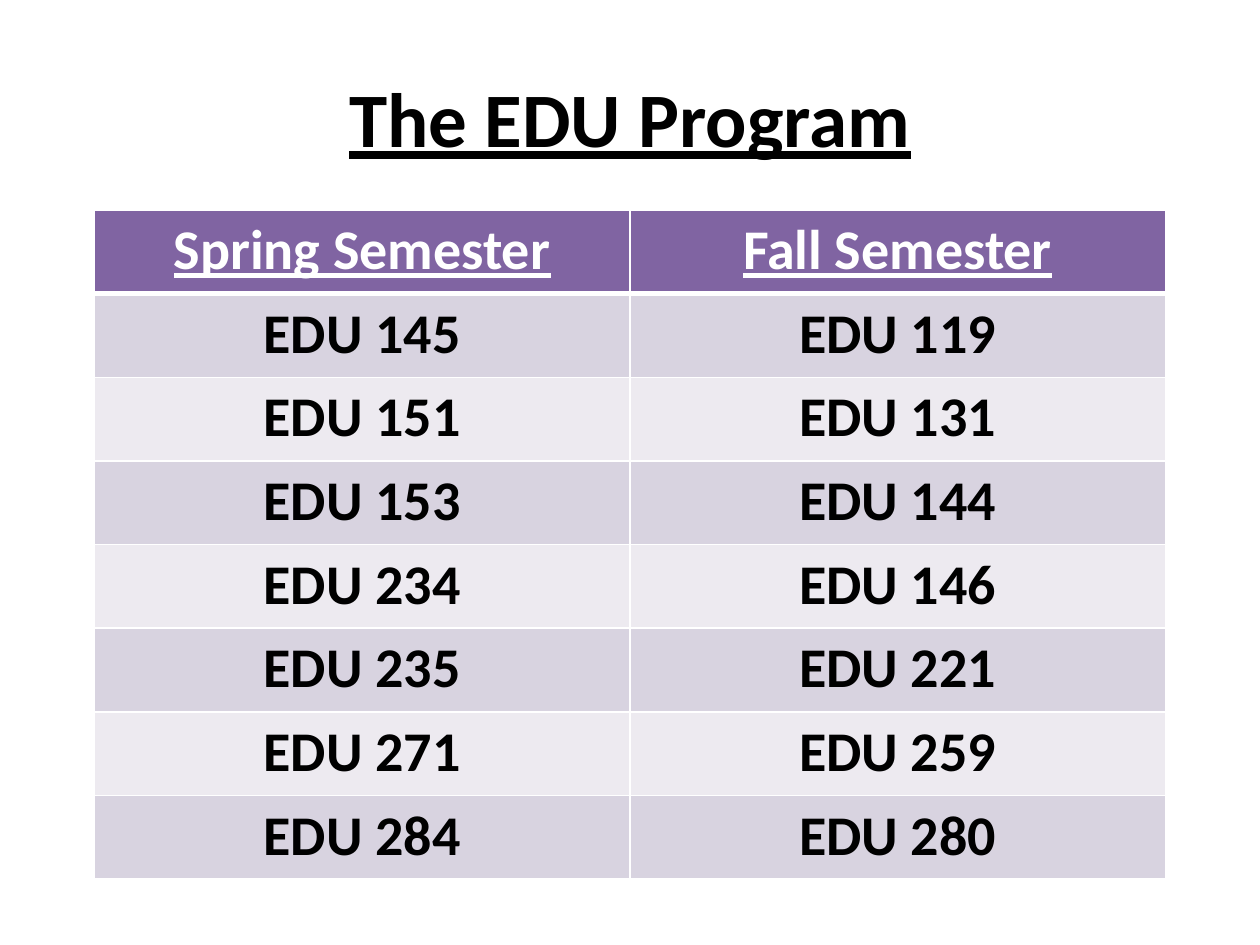
from dataclasses import dataclass

from lxml import etree
from pptx import Presentation
from pptx.dml.color import RGBColor
from pptx.enum import text
from pptx.oxml import ns
from pptx.util import Pt


@dataclass(frozen=True)
class Theme:
    font: str = "Calibri"
    ink: str = "000000"
    white: str = "FFFFFF"
    header_fill: str = "8064A2"
    bands: tuple[str, str] = ("D8D3E0", "EDEAF0")
    title_size: int = 44
    table_size: int = 32
    rule: int = 1
    header_rule: int = 3


@dataclass(frozen=True)
class Semester:
    name: str
    courses: tuple[int, ...]


@dataclass(frozen=True)
class Box:
    left: float
    top: float
    width: float
    height: float


THEME = Theme()
TITLE_BOX = Box(36, 21.6, 648, 90)
TABLE_BOX = Box(54, 120, 612, 382.4)
SEMESTERS = (
    Semester("Spring Semester", (145, 151, 153, 234, 235, 271, 284)),
    Semester("Fall Semester", (119, 131, 144, 146, 221, 259, 280)),
)


def format_paragraph(paragraph, size: int, color: str, underline: bool) -> None:
    paragraph.alignment = text.PP_ALIGN.CENTER
    font = paragraph.font
    font.name = THEME.font
    font.size = Pt(size)
    font.bold = True
    font.underline = underline
    font.color.rgb = RGBColor.from_string(color)


def add_borders(cell, top: int, bottom: int) -> None:
    """Draw white cell edges; the lines must precede the fill in the XML."""
    properties = cell._tc.get_or_add_tcPr()
    widths = {"lnL": THEME.rule, "lnR": THEME.rule, "lnT": top, "lnB": bottom}
    for position, (edge, width) in enumerate(widths.items()):
        line = etree.Element(ns.qn(f"a:{edge}"), w=str(Pt(width)))
        fill = etree.SubElement(line, ns.qn("a:solidFill"))
        etree.SubElement(fill, ns.qn("a:srgbClr"), val=THEME.white)
        properties.insert(position, line)


def fill_cell(cell, label: str, row: int) -> None:
    is_header = row == 0
    cell.text = label
    format_paragraph(
        cell.text_frame.paragraphs[0],
        THEME.table_size,
        THEME.white if is_header else THEME.ink,
        underline=is_header,
    )
    cell.fill.solid()
    fill = THEME.header_fill if is_header else THEME.bands[(row - 1) % 2]
    cell.fill.fore_color.rgb = RGBColor.from_string(fill)
    add_borders(
        cell,
        top=THEME.header_rule if row == 1 else THEME.rule,
        bottom=THEME.header_rule if is_header else THEME.rule,
    )


def add_title(slide, wording: str, box: Box) -> None:
    title = slide.shapes.title
    title.left, title.top = Pt(box.left), Pt(box.top)
    title.width, title.height = Pt(box.width), Pt(box.height)
    title.text = wording
    title.text_frame.vertical_anchor = text.MSO_ANCHOR.MIDDLE
    format_paragraph(
        title.text_frame.paragraphs[0], THEME.title_size, THEME.ink, underline=True
    )


def add_course_table(slide, semesters: tuple[Semester, ...], box: Box) -> None:
    row_count = 1 + len(semesters[0].courses)
    table = slide.shapes.add_table(
        row_count, len(semesters),
        Pt(box.left), Pt(box.top), Pt(box.width), Pt(box.height),
    ).table
    for table_row in table.rows:
        table_row.height = Pt(box.height / row_count)
    for column, semester in enumerate(semesters):
        labels = [semester.name, *(f"EDU {number}" for number in semester.courses)]
        for row, label in enumerate(labels):
            fill_cell(table.cell(row, column), label, row)


def main() -> None:
    presentation = Presentation()
    presentation.slide_width, presentation.slide_height = Pt(720), Pt(540)
    title_only = presentation.slide_layouts[5]
    slide = presentation.slides.add_slide(title_only)
    add_title(slide, "The EDU Program", TITLE_BOX)
    add_course_table(slide, SEMESTERS, TABLE_BOX)
    presentation.save("out.pptx")


if __name__ == "__main__":
    main()
